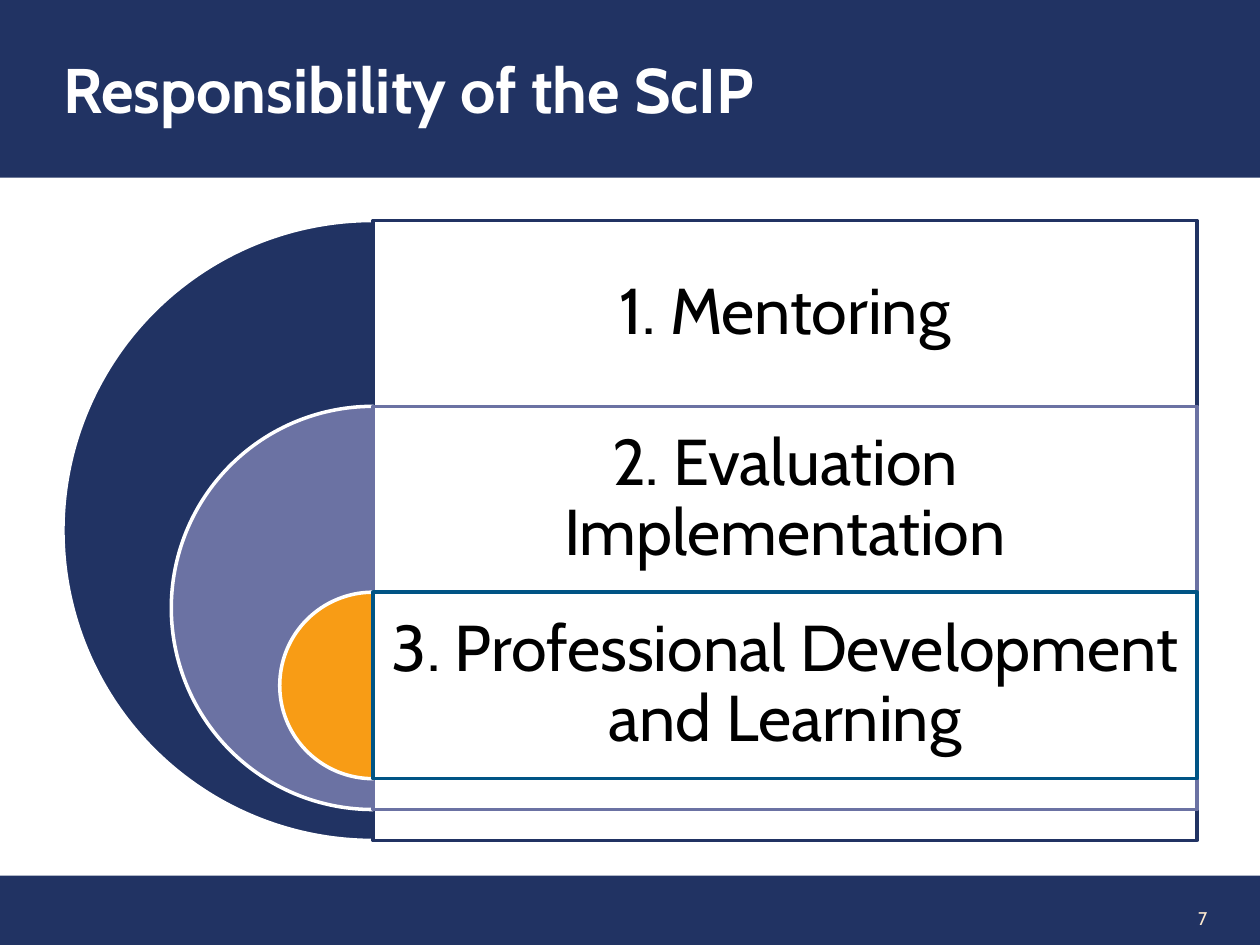
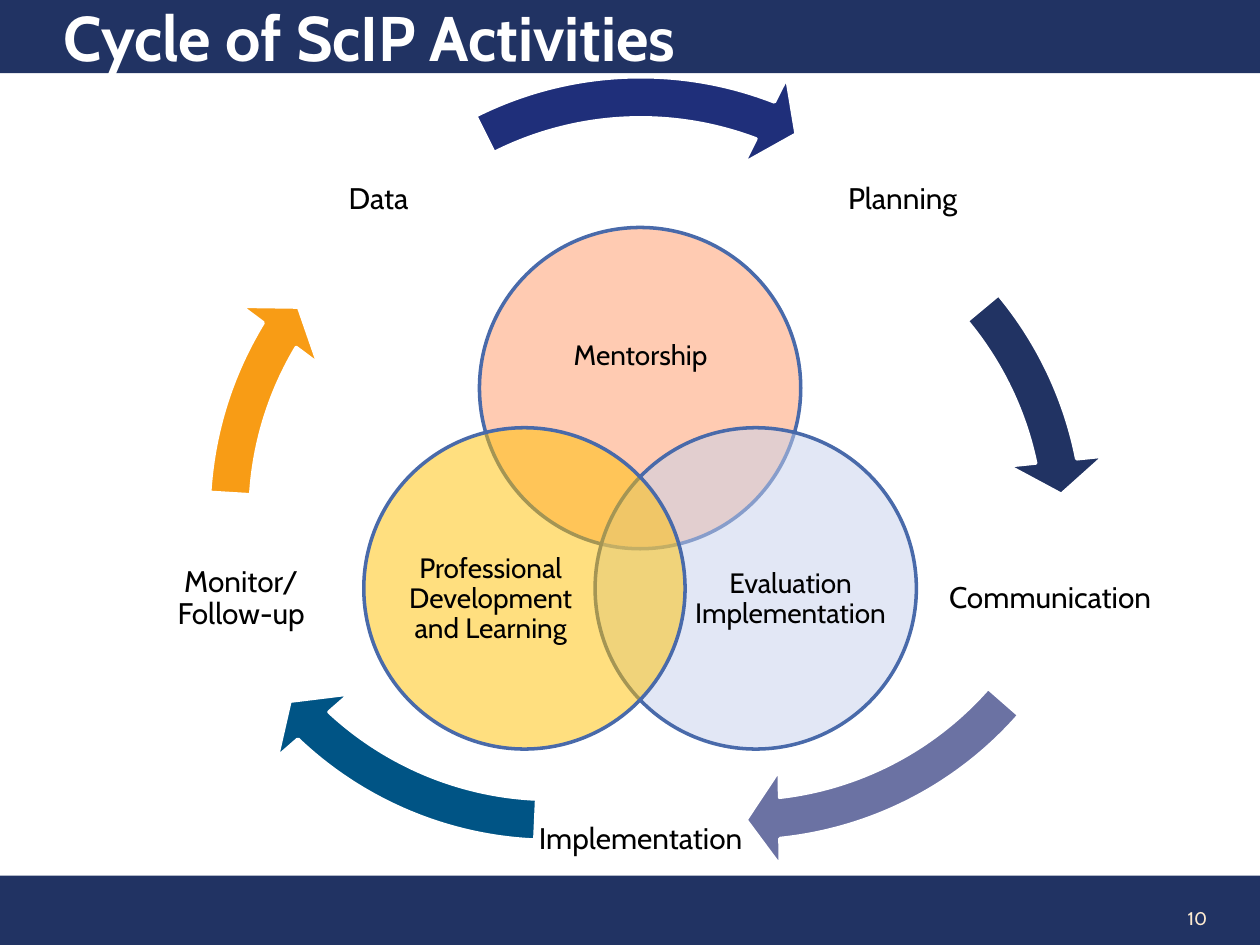
"""Builds two slides on the duties and yearly cycle of the ScIP."""
from math import cos, radians, sin

from lxml import etree
from pptx import Presentation
from pptx.dml.color import RGBColor
from pptx.enum.shapes import MSO_SHAPE
from pptx.enum.text import MSO_ANCHOR, MSO_AUTO_SIZE, PP_ALIGN
from pptx.oxml.ns import qn
from pptx.util import Inches, Pt

RECT, OVAL = MSO_SHAPE.RECTANGLE, MSO_SHAPE.OVAL
PIE, ARROW = MSO_SHAPE.PIE, MSO_SHAPE.CIRCULAR_ARROW
MIDDLE, FIXED = MSO_ANCHOR.MIDDLE, MSO_AUTO_SIZE.NONE
LEFT, CENTER, RIGHT = PP_ALIGN.LEFT, PP_ALIGN.CENTER, PP_ALIGN.RIGHT

FONT = "Cabin"
NAVY, LILAC, ORANGE, TEAL = "213363", "6B72A3", "F89C15", "005485"
INDIGO, RIM, CREAM = "1F2F7A", "496AAA", "FEEBD0"
WHITE, BLACK = "FFFFFF", "000000"

DUTIES = [
    ("1. Mentoring", NAVY, NAVY),
    ("2. Evaluation Implementation", LILAC, LILAC),
    ("3. Professional Development and Learning", ORANGE, TEAL),
]
STEPS = [
    ("Planning", 6.33, 0.75),
    ("Communication", 7.5, 3.92),
    ("Implementation", 4.25, 5.83),
    ("Monitor/Follow-up", 1.08, 3.92),
    ("Data", 2.17, 0.75),
]
# Left, top, head angle and tail angle in degrees
ARROWS = [
    (2.55, 1.07, 348.55, 320.21, NAVY),
    (2.76, 0.62, 83.86, 41.23, LILAC),
    (1.24, 0.62, 133.28, 92.56, TEAL),
    (1.44, 0.95, 211.17, 183.48, ORANGE),
    (1.95, 0.39, 291.04, 243.31, INDIGO),
]
CIRCLES = [
    ("Mentorship", "FF9966", (4.15, 2.25, 1.87, 1.15)),
    ("Evaluation Implementation", "C6D1EC", (5.51, 4.06, 1.53, 1.4)),
    ("Professional Development and Learning", "FFC000",
     (3.13, 4.06, 1.53, 1.4)),
]


def color(code):
    return RGBColor.from_string(code)


def place(box):
    return [Inches(v) for v in box]


def turn(angle):
    """Gives an angle in degrees as a shape adjustment value."""
    return angle * 0.6


def paint(shape, fill, alpha=None):
    shape.fill.solid()
    shape.fill.fore_color.rgb = color(fill)
    if alpha:
        tint = shape.fill._xPr.find(".//" + qn("a:srgbClr"))
        etree.SubElement(tint, qn("a:alpha"), val=str(alpha * 1000))


def draw(slide, kind, box, fill, line=None, alpha=None, adjust=()):
    shape = slide.shapes.add_shape(kind, *place(box))
    shape.shadow.inherit = False
    for i, value in enumerate(adjust):
        shape.adjustments[i] = value
    paint(shape, fill, alpha)
    if line:
        shape.line.color.rgb = color(line)
        shape.line.width = Pt(2)
    else:
        shape.line.fill.background()


def write(frame, text, size, ink, align, inset, bold=False, space=None):
    """Fills a text frame with one paragraph."""
    frame.word_wrap = True
    frame.auto_size = FIXED
    frame.vertical_anchor = MIDDLE
    (frame.margin_left, frame.margin_top,
     frame.margin_right, frame.margin_bottom) = place(inset)
    para = frame.paragraphs[0]
    para.alignment = align
    para.line_spacing = space
    run = para.add_run()
    run.text = text
    font = run.font
    font.name, font.size, font.bold = FONT, Pt(size), bold
    font.color.rgb = color(ink)


def label(slide, text, box, size, pad):
    frame = slide.shapes.add_textbox(*place(box)).text_frame
    write(frame, text, size, BLACK, CENTER, [pad] * 4, space=0.9)


def start(deck, text, height, number):
    """Adds a slide with its title band, footer band and page number."""
    slide = deck.slides.add_slide(deck.slide_layouts[5])
    draw(slide, RECT, (0, 6.95, 10, 0.55), NAVY)
    page = slide.shapes.add_textbox(*place((8.22, 7.09, 1.46, 0.4)))
    write(page.text_frame, number, 10.5, CREAM, RIGHT, (0.1, 0.05, 0.1, 0.05))
    title = slide.shapes.title
    title.left, title.top, title.width, title.height = place((0, 0, 10, height))
    paint(title, NAVY)
    write(title.text_frame, text, 36, WHITE, LEFT, (0.5, 0.05, 0.1, 0.05), True)
    return slide


def duties(deck):
    slide = start(deck, "Responsibility of the ScIP", 1.41, "7")
    axis, top, row, wide = 2.96, 1.75, 1.475, 6.54
    for i, (text, fill, edge) in enumerate(DUTIES):
        y, size = top + i * row, 4.92 - i * 1.72
        draw(slide, PIE, (axis - size / 2, y, size, size), fill, WHITE,
             adjust=(turn(90), turn(270)))
        draw(slide, RECT, (axis, y, wide, size), WHITE, edge, 90)
        label(slide, text, (axis, y, wide, row), 37, 0.15)


def cycle(deck):
    slide = start(deck, "Cycle of ScIP Activities", 0.58, "10")
    for x, y, head, tail, fill in ARROWS:
        draw(slide, ARROW, (x, y, 6.27, 6.27), fill, WHITE,
             adjust=(0.052, 3.358, turn(head), turn(tail), 0.061))
    for text, x, y in STEPS:
        label(slide, text, (x, y, 1.67, 1.67), 17, 0.02)
    mid_x, mid_y, reach, size = 5.08, 4.14, 1.06, 2.55
    for i, (text, fill, box) in enumerate(CIRCLES):
        angle = radians(120 * i)
        x = mid_x + reach * sin(angle) - size / 2
        y = mid_y - reach * cos(angle) - size / 2
        draw(slide, OVAL, (x, y, size, size), fill, RIM, 50)
        label(slide, text, box, 16, 0)


def main():
    deck = Presentation()
    deck.slide_width, deck.slide_height = Inches(10), Inches(7.5)
    duties(deck)
    cycle(deck)
    deck.save("out.pptx")


if __name__ == "__main__":
    main()
